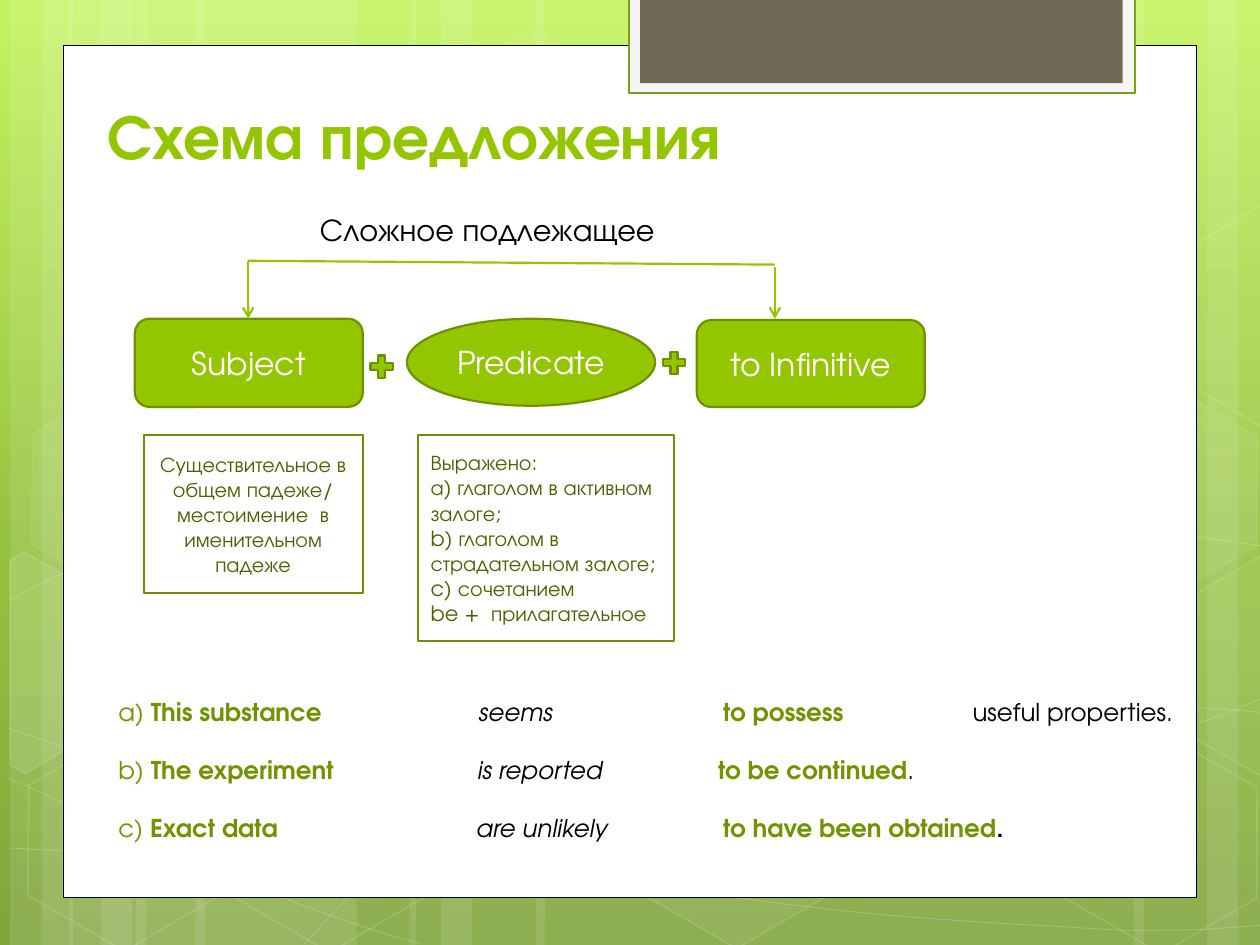
from dataclasses import dataclass
from typing import Optional

from lxml.etree import SubElement
from pptx import Presentation
from pptx.dml.color import RGBColor
from pptx.enum.shapes import MSO_CONNECTOR as Connector, MSO_SHAPE as Shape
from pptx.enum.text import MSO_ANCHOR as Anchor, MSO_AUTO_SIZE as AutoSize, PP_ALIGN as Align
from pptx.oxml import parse_xml
from pptx.oxml.ns import nsdecls, qn
from pptx.util import Inches, Pt

FONT = "TeX Gyre Adventor"
WHITE = RGBColor(0xFF, 0xFF, 0xFF)
BLACK = RGBColor(0, 0, 0)
GREEN = RGBColor(0x94, 0xC6, 0x00)
EDGE = RGBColor(0x6D, 0x92, 0x00)
OLIVE = RGBColor(0x6F, 0x94, 0x00)
MOSS = RGBColor(0x4A, 0x63, 0x00)
TAB_EDGE = RGBColor(0x74, 0xA5, 0x10)
TAB_FACE = RGBColor(0xF5, 0xF5, 0xF5)
TAUPE = RGBColor(0x71, 0x68, 0x5A)
BACKDROP = ((0, RGBColor(0xC3, 0xF3, 0x5F)), (62, RGBColor(0x93, 0xBF, 0x3F)),
            (100, RGBColor(0x81, 0xA5, 0x3E)))


@dataclass
class Look:
    fill: Optional[RGBColor] = None
    line: Optional[RGBColor] = None
    width: float = 1.25
    fill_alpha: int = 100
    line_alpha: int = 100


@dataclass
class Run:
    text: str
    color: RGBColor
    bold: bool = False
    italic: bool = False


@dataclass
class Node:
    kind: Shape
    box: tuple
    text: str


@dataclass
class Example:
    label: str
    subject: str
    predicate: str
    infinitive: str
    ending: str
    stops: tuple
    bold_ending: bool = False


SOLID = Look(GREEN, EDGE)
OUTLINE = Look(None, EDGE)
STRIPES = ((1.08, 1.75), (0.08, 0.5), (0.33, 0.83), (1.55, 1.75), (0.55, 0.5), (0.8, 0.83),
           (7.33, 1.75), (9.58, 0.5), (9, 0.83), (4.25, 3.08), (3.25, 0.5), (3.5, 0.83))
CURVES = (
    ((0.07, 6.73), (0.61, 6.76, 1.15, 6.79, 1.9, 6.78), (2.65, 6.77, 3.58, 6.75, 4.58, 6.65),
     (5.58, 6.55, 7, 6.36, 7.92, 6.17), (8.83, 5.98, 9.77, 5.68, 10.07, 5.51)),
    ((0.07, 4.77), (0.36, 4.61, 0.65, 4.46, 1.21, 4.31), (1.78, 4.16, 2.59, 3.94, 3.47, 3.87),
     (4.36, 3.8, 5.44, 3.79, 6.54, 3.87), (7.64, 3.95, 9.47, 4.26, 10.07, 4.34)),
    ((0.06, 6.17), (1.27, 6.72, 2.47, 7.27, 3.34, 7.49)),
    ((0.07, 5.78), (0.38, 5.89, 0.7, 6, 1.28, 6.16), (1.86, 6.31, 2.73, 6.56, 3.57, 6.73),
     (4.4, 6.9, 5.45, 7.08, 6.28, 7.18), (7.11, 7.29, 8, 7.33, 8.53, 7.36),
     (9.05, 7.4, 9.19, 7.38, 9.45, 7.38), (9.71, 7.37, 9.89, 7.35, 10.07, 7.34)),
    ((2.42, 7.49), (2.6, 7.29, 2.78, 7.09, 3.02, 6.91), (3.26, 6.73, 3.6, 6.53, 3.88, 6.39),
     (4.16, 6.25, 4.33, 6.19, 4.7, 6.09), (5.06, 5.99, 5.73, 5.85, 6.08, 5.78),
     (6.44, 5.71, 6.49, 5.71, 6.8, 5.69), (7.11, 5.66, 7.6, 5.63, 7.94, 5.62),
     (8.29, 5.61, 8.86, 5.62, 8.86, 5.62), (9.53, 5.62),
     (9.71, 5.63, 9.88, 5.64, 9.97, 5.65), (10.06, 5.66, 10.03, 5.65, 10.06, 5.66)),
)
HEXAGONS = ((3.34, 0.36, 4, 8), (4.97, 5.89, 6, 12), (0.11, 5.91, 0, 12), (0.14, 3.12, 7, 8),
            (1.74, 5.92, 0, 12), (7.53, 4.53, 10, 12), (8.34, 5.93, 0, 12), (8.34, 3.14, 7, 8))
CUT_HEXAGONS = (
    (((0.08, 4.45), (0.19, 4.38), (0.96, 4.82), (0.95, 5.7), (0.2, 6.14), (0.08, 6.07)), 10),
    (((9.26, 4.85), (10.01, 4.41), (10.09, 4.46), (10.09, 6.13), (10.02, 6.17), (9.26, 5.73)), 4),
    (((9.26, 2.07), (10.01, 1.63), (10.1, 1.68), (10.09, 3.35), (10.02, 3.39), (9.26, 2.95)), 0),
)
NODES = (
    Node(Shape.OVAL, (3.23, 2.53, 1.97, 0.69), "Predicate"),
    Node(Shape.ROUNDED_RECTANGLE, (1.07, 2.53, 1.81, 0.7), "Subject"),
    Node(Shape.ROUNDED_RECTANGLE, (5.53, 2.54, 1.81, 0.69), "to Infinitive"),
)
BRACKET = (((1.97, 2.07), (6.15, 2.1), False), ((1.97, 2.07), (1.97, 2.53), True),
           ((6.15, 2.12), (6.15, 2.53), True))
SUBJECT_NOTE = "Существительное в общем падеже/ местоимение  в именительном падеже"
PREDICATE_NOTES = ("Выражено:", "а) глаголом в активном залоге;",
                   "b) глаголом в страдательном залоге;", "c) сочетанием",
                   "be +  прилагательное")
EXAMPLES = (
    Example("a) ", "This substance", "seems", "to possess", "\tuseful properties.",
            (2.86, 4.8, 6.78)),
    Example("b) ", "The experiment", "is reported", "to be continued", ".", (2.85, 4.76)),
    Example("c) ", "Exact data", "are unlikely", "to have been obtained", ".", (2.84, 4.8), True),
)


def set_alpha(sp, query: str, percent: int) -> None:
    if percent < 100:
        for color in sp.element.spPr.xpath(query):
            SubElement(color, qn("a:alpha"), val=str(percent * 1000))


def paint(sp, look: Look) -> None:
    sp.shadow.inherit = False
    if look.fill is None or look.fill_alpha == 0:
        sp.fill.background()
    else:
        sp.fill.solid()
        sp.fill.fore_color.rgb = look.fill
        set_alpha(sp, "./a:solidFill/a:srgbClr", look.fill_alpha)
    if look.line is None:
        sp.line.fill.background()
    else:
        sp.line.color.rgb = look.line
        sp.line.width = Pt(look.width)
        set_alpha(sp, "./a:ln/a:solidFill/a:srgbClr", look.line_alpha)


def add_shape(s, kind: Shape, box: tuple, look: Look):
    sp = s.shapes.add_shape(kind, *map(Inches, box))
    paint(sp, look)
    return sp


def add_path(s, points: list, closed: bool, look: Look):
    start, *rest = [(Inches(x), Inches(y)) for x, y in points]
    builder = s.shapes.build_freeform(*start, scale=1.0)
    builder.add_line_segments(rest, close=closed)
    sp = builder.convert_to_shape()
    paint(sp, look)
    return sp


def add_curve(s, start: tuple, *segments: tuple) -> None:
    points = [start] + [seg[i:i + 2] for seg in segments for i in range(0, len(seg), 2)]
    sp = add_path(s, points, False, Look(None, WHITE, 0.5, line_alpha=20))
    steps = iter(sp.element.spPr.xpath(".//a:lnTo"))
    for seg in segments:
        first = next(steps)
        if len(seg) == 6:
            first.tag = qn("a:cubicBezTo")
            for step in (next(steps), next(steps)):
                first.append(step[0])
                step.getparent().remove(step)


def write(tf, paragraphs: list, size: float, align: Align = Align.LEFT,
          anchor: Anchor = Anchor.MIDDLE, wrap: bool = True) -> None:
    tf.word_wrap = wrap
    tf.vertical_anchor = anchor
    for i, runs in enumerate(paragraphs):
        p = tf.paragraphs[0] if i == 0 else tf.add_paragraph()
        p.alignment = align
        for run in runs:
            r = p.add_run()
            r.text = run.text
            r.font.name, r.font.size = FONT, Pt(size)
            r.font.bold, r.font.italic = run.bold, run.italic
            r.font.color.rgb = run.color


def add_text(s, box: tuple, paragraphs: list, size: float, wrap: bool = True):
    tf = s.shapes.add_textbox(*map(Inches, box)).text_frame
    write(tf, paragraphs, size, anchor=Anchor.TOP, wrap=wrap)
    tf.auto_size = AutoSize.SHAPE_TO_FIT_TEXT
    return tf


def add_line(s, start: tuple, end: tuple, arrow: bool) -> None:
    c = s.shapes.add_connector(Connector.STRAIGHT, *map(Inches, start + end))
    c.line.color.rgb, c.line.width = GREEN, Pt(1.25)
    if arrow:
        SubElement(c.element.spPr.find(qn("a:ln")), qn("a:tailEnd"), type="arrow")
    SubElement(c.element.spPr, qn("a:effectLst"))


def draw_backdrop(s) -> None:
    s.background.fill.solid()
    solid = s.element.xpath(".//p:bgPr/a:solidFill")[0]
    stops = "".join(f'<a:gs pos="{pos * 1000}"><a:srgbClr val="{color}"/></a:gs>'
                    for pos, color in BACKDROP)
    solid.getparent().replace(solid, parse_xml(
        f'<a:gradFill {nsdecls("a")} rotWithShape="1"><a:gsLst>{stops}</a:gsLst>'
        '<a:lin ang="5400000" scaled="0"/></a:gradFill>'))
    for left, width in STRIPES:
        add_shape(s, Shape.RECTANGLE, (left, 0, width, 7.5), Look(WHITE, fill_alpha=10))
    for curve in CURVES:
        add_curve(s, *curve)
    for left, top, fill, line in HEXAGONS:
        sp = add_shape(s, Shape.HEXAGON, (left, top, 1.75, 1.52), Look(WHITE, WHITE, 1, fill, line))
        sp.rotation = 30
        sp.adjustments[0], sp.adjustments[1] = 0.285, 1.155
    for points, fill in CUT_HEXAGONS:
        add_path(s, points, True, Look(WHITE, WHITE, 1, fill, 12))
    add_shape(s, Shape.RECTANGLE, (0.5, 0.36, 9, 6.76), Look(WHITE, BLACK, 0.5))
    add_shape(s, Shape.RECTANGLE, (4.99, -0.02, 4.02, 0.76), Look(TAB_FACE, TAB_EDGE))
    add_shape(s, Shape.RECTANGLE, (5.08, -0.02, 3.83, 0.68), Look(TAUPE))


def draw_title(s) -> None:
    title = s.shapes.title
    title.left, title.top, title.width, title.height = map(Inches, (0.75, 0.92, 7.68, 0.5))
    write(title.text_frame, [[Run("Схема предложения", GREEN, True)]], 36, anchor=Anchor.BOTTOM)
    s.shapes.element.append(title.element)


def draw_scheme(s) -> None:
    for node in NODES:
        sp = add_shape(s, node.kind, node.box, SOLID)
        write(sp.text_frame, [[Run(node.text, WHITE)]], 18, Align.CENTER)
    for start, end, arrow in BRACKET:
        add_line(s, start, end, arrow)
    for left, top in ((2.91, 2.79), (5.23, 2.76)):
        add_shape(s, Shape.MATH_PLUS, (left, top, 0.24, 0.24), SOLID)
    sp = add_shape(s, Shape.RECTANGLE, (1.14, 3.45, 1.74, 1.26), OUTLINE)
    write(sp.text_frame, [[Run(SUBJECT_NOTE, MOSS)]], 12, Align.CENTER)


def draw_examples(s) -> None:
    rows = [[Run(e.label, OLIVE), Run(e.subject + "\t", OLIVE, True),
             Run(e.predicate + "\t", BLACK, italic=True), Run(e.infinitive, OLIVE, True),
             Run(e.ending, BLACK, e.bold_ending)] for e in EXAMPLES]
    tf = add_text(s, (0.84, 5.48, 8.65, 1.28), rows, 14)
    for i, (p, example) in enumerate(zip(tf.paragraphs, EXAMPLES)):
        p.space_before = Pt(16.5 if i else 0)
        tabs = SubElement(p._p.get_or_add_pPr(), qn("a:tabLst"))
        for stop in example.stops:
            SubElement(tabs, qn("a:tab"), pos=str(Inches(stop)), algn="l")


def draw_captions(s) -> None:
    add_text(s, (2.44, 1.62, 3.25, 0.4), [[Run("Сложное подлежащее", BLACK)]], 18, wrap=False)
    sp = add_shape(s, Shape.RECTANGLE, (3.32, 3.45, 2.03, 1.64), OUTLINE)
    write(sp.text_frame, [[Run(note, MOSS)] for note in PREDICATE_NOTES], 12)


def main() -> None:
    prs = Presentation()
    prs.slide_width, prs.slide_height = Inches(10), Inches(7.5)
    s = prs.slides.add_slide(prs.slide_layouts[5])
    draw_backdrop(s)
    draw_title(s)
    draw_scheme(s)
    draw_examples(s)
    draw_captions(s)
    prs.save("out.pptx")


if __name__ == "__main__":
    main()
